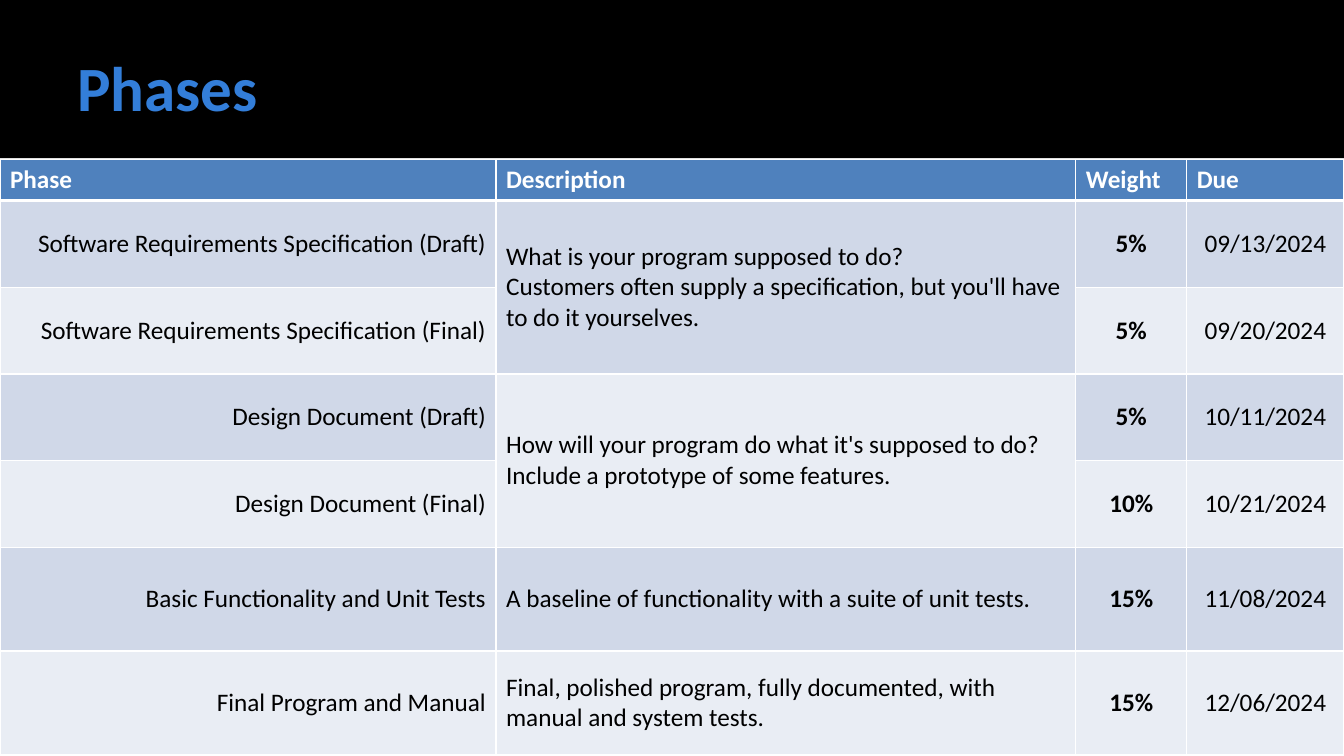
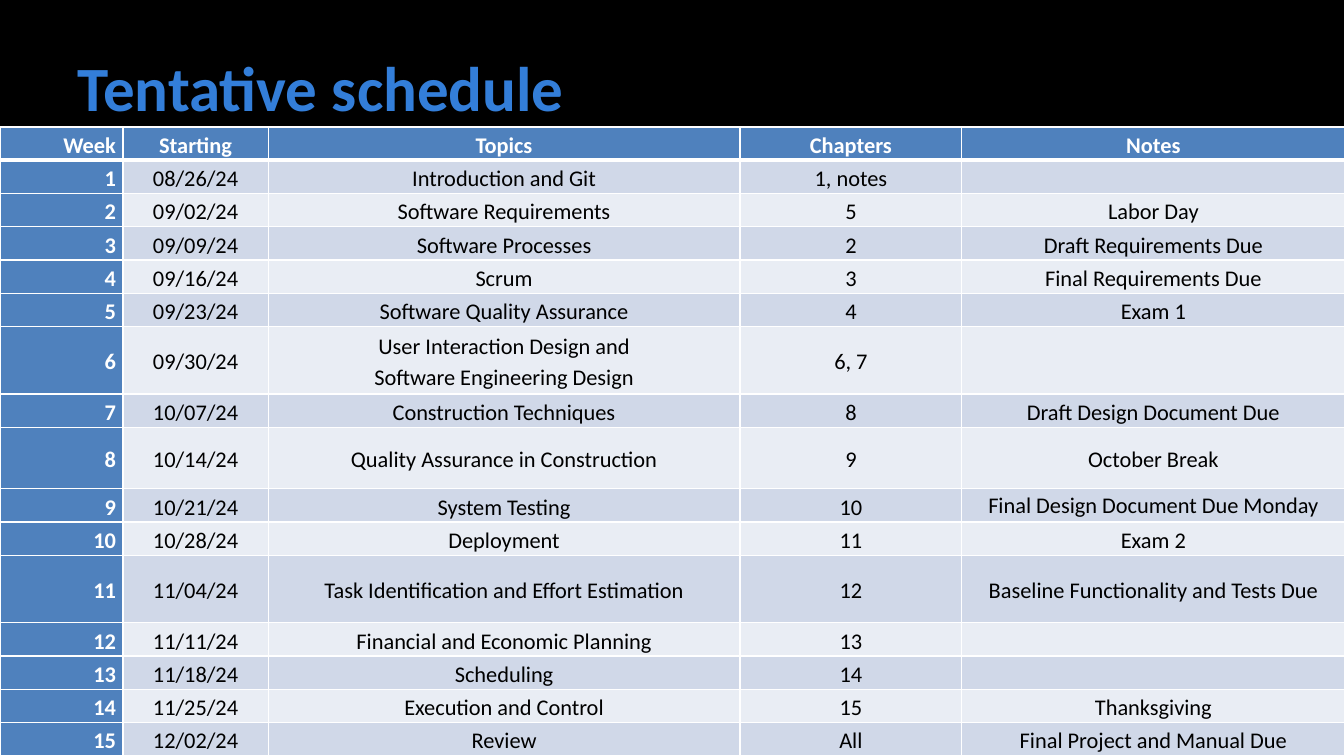
from dataclasses import dataclass
from typing import Optional

from lxml.etree import SubElement
from pptx import Presentation
from pptx.dml.color import RGBColor
from pptx.enum.shapes import MSO_SHAPE as Shape
from pptx.enum.text import MSO_ANCHOR as Anchor, PP_ALIGN as Align
from pptx.oxml.ns import qn
from pptx.util import Inches, Pt

COLORS = {
    "band": "000000",
    "title": "337ED9",
    "header": "4F81BD",
    "dark": "D0D8E8",
    "light": "E9EDF4",
    "border": "FFFFFF",
    "header_text": "FFFFFF",
    "text": "000000",
}
FONT = "Calibri"
WIDTH, HEIGHT = 13.33, 7.5
BAND_HEIGHT = 1.57


@dataclass(frozen=True)
class Column:
    head: str
    width: float
    align: Align = Align.CENTER
    head_align: Align = Align.CENTER
    bold: bool = False
    is_header: bool = False


@dataclass(frozen=True)
class TableStyle:
    size: int
    margin_x: float
    margin_y: float
    spacing: float
    head_anchor: Anchor


@dataclass(frozen=True)
class TableSlide:
    title: str
    top: float
    style: TableStyle
    columns: list[Column]
    heights: list[float]
    rows: list[tuple[Optional[str], ...]]
    single_spaced: tuple[str, ...] = ()


PHASES = TableSlide(
    title="Phases",
    top=1.58,
    style=TableStyle(18, 0.1, 0.05, 1.0, Anchor.TOP),
    columns=[
        Column("Phase", 4.92, Align.RIGHT, Align.LEFT),
        Column("Description", 5.75, Align.LEFT, Align.LEFT),
        Column("Weight", 1.1, head_align=Align.LEFT, bold=True),
        Column("Due", 1.56, head_align=Align.LEFT),
    ],
    heights=[0.41] + [0.86] * 4 + [1.03] * 2,
    rows=[
        ("Software Requirements Specification (Draft)",
         "What is your program supposed to do?\n"
         "Customers often supply a specification, but you'll have to do it yourselves.",
         "5%", "09/13/2024"),
        ("Software Requirements Specification (Final)", None, "5%", "09/20/2024"),
        ("Design Document (Draft)",
         "How will your program do what it's supposed to do?\n"
         "Include a prototype of some features.",
         "5%", "10/11/2024"),
        ("Design Document (Final)", None, "10%", "10/21/2024"),
        ("Basic Functionality and Unit Tests",
         "A baseline of functionality with a suite of unit tests.",
         "15%", "11/08/2024"),
        ("Final Program and Manual",
         "Final, polished program, fully documented, with manual and system tests.",
         "15%", "12/06/2024"),
    ],
)

SCHEDULE = TableSlide(
    title="Tentative schedule",
    top=1.26,
    style=TableStyle(16, 0.07, 0, 1.15, Anchor.MIDDLE),
    columns=[
        Column("Week", 1.22, Align.RIGHT, Align.RIGHT, bold=True, is_header=True),
        Column("Starting", 1.44),
        Column("Topics", 4.68),
        Column("Chapters", 2.2),
        Column("Notes", 3.8),
    ],
    heights=[{6: 0.67, 8: 0.61, 11: 0.67}.get(week, 0.33) for week in range(16)],
    rows=[
        ("1", "08/26/24", "Introduction and Git", "1, notes", ""),
        ("2", "09/02/24", "Software Requirements", "5", "Labor Day"),
        ("3", "09/09/24", "Software Processes", "2", "Draft Requirements Due"),
        ("4", "09/16/24", "Scrum", "3", "Final Requirements Due"),
        ("5", "09/23/24", "Software Quality Assurance", "4", "Exam 1"),
        ("6", "09/30/24",
         "User Interaction Design and\nSoftware Engineering Design", "6, 7", ""),
        ("7", "10/07/24", "Construction Techniques", "8", "Draft Design Document Due"),
        ("8", "10/14/24", "Quality Assurance in Construction", "9", "October Break"),
        ("9", "10/21/24", "System Testing", "10", "Final Design Document Due Monday"),
        ("10", "10/28/24", "Deployment", "11", "Exam 2"),
        ("11", "11/04/24", "Task Identification and Effort Estimation", "12",
         "Baseline Functionality and Tests Due"),
        ("12", "11/11/24", "Financial and Economic Planning", "13", ""),
        ("13", "11/18/24", "Scheduling", "14", ""),
        ("14", "11/25/24", "Execution and Control", "15", "Thanksgiving"),
        ("15", "12/02/24", "Review", "All", "Final Project and Manual Due"),
    ],
    single_spaced=("Final Design Document Due Monday",),
)


def rgb(name: str) -> RGBColor:
    return RGBColor.from_string(COLORS[name])


def add_run(p, text: str, size: int, color: str, bold: bool) -> None:
    r = p.add_run()
    r.text = text
    r.font.name = FONT
    r.font.size = Pt(size)
    r.font.bold = bold
    r.font.color.rgb = rgb(color)


def add_title(s, text: str) -> None:
    band = s.shapes.add_shape(Shape.RECTANGLE, 0, 0, Inches(WIDTH), Inches(BAND_HEIGHT))
    band.shadow.inherit = False
    band.fill.solid()
    band.fill.fore_color.rgb = rgb("band")
    band.line.fill.background()
    sp = s.shapes.add_textbox(Inches(0.67), Inches(0.17), Inches(12), Inches(1.37))
    tf = sp.text_frame
    tf.word_wrap = True
    tf.vertical_anchor = Anchor.MIDDLE
    tf.margin_left = Inches(0.1)
    tf.margin_right = tf.margin_top = tf.margin_bottom = Inches(0.05)
    add_run(tf.paragraphs[0], text, 45, "title", True)


def set_borders(cell, row: int) -> None:
    tc_pr = cell._tc.get_or_add_tcPr()
    widths = {"lnL": 1, "lnR": 1, "lnT": 3 if row == 1 else 1, "lnB": 3 if row == 0 else 1}
    for tag, width in widths.items():
        ln = SubElement(tc_pr, qn(f"a:{tag}"), w=str(Pt(width)))
        fill = SubElement(ln, qn("a:solidFill"))
        SubElement(fill, qn("a:srgbClr"), val=COLORS["border"])


def fill_cell(cell, text: str, style: TableStyle, align: Align, color: str,
              bold: bool, spacing: float) -> None:
    cell.margin_left = cell.margin_right = Inches(style.margin_x)
    cell.margin_top = cell.margin_bottom = Inches(style.margin_y)
    tf = cell.text_frame
    for i, line in enumerate(text.split("\n") if text else []):
        p = tf.add_paragraph() if i else tf.paragraphs[0]
        p.alignment = align
        p.line_spacing = spacing
        add_run(p, line, style.size, color, bold)


def add_table(s, data: TableSlide) -> None:
    grid = [tuple(c.head for c in data.columns), *data.rows]
    frame = s.shapes.add_table(len(grid), len(data.columns), 0, Inches(data.top),
                               Inches(WIDTH), Inches(sum(data.heights)))
    table = frame.table
    table.horz_banding = False
    for row, height in zip(table.rows, data.heights):
        row.height = Inches(height)
    for c, col in enumerate(data.columns):
        table.columns[c].width = Inches(col.width)
        block = 0
        for r, values in enumerate(grid):
            text, cell = values[c], table.cell(r, c)
            is_head = r == 0
            block += text is not None
            band = "light" if block % 2 else "dark"
            shade = "header" if is_head or col.is_header else band
            set_borders(cell, r)
            cell.fill.solid()
            cell.fill.fore_color.rgb = rgb(shade)
            if text is None:
                table.cell(r - 1, c).merge(cell)
                continue
            cell.vertical_anchor = data.style.head_anchor if is_head else Anchor.MIDDLE
            fill_cell(cell, text, data.style,
                      col.head_align if is_head else col.align,
                      "header_text" if shade == "header" else "text",
                      is_head or col.bold,
                      1.0 if text in data.single_spaced else data.style.spacing)


def main() -> None:
    prs = Presentation()
    prs.slide_width, prs.slide_height = Inches(WIDTH), Inches(HEIGHT)
    for data in (PHASES, SCHEDULE):
        s = prs.slides.add_slide(prs.slide_layouts[6])
        add_title(s, data.title)
        add_table(s, data)
    prs.save("out.pptx")


if __name__ == "__main__":
    main()
